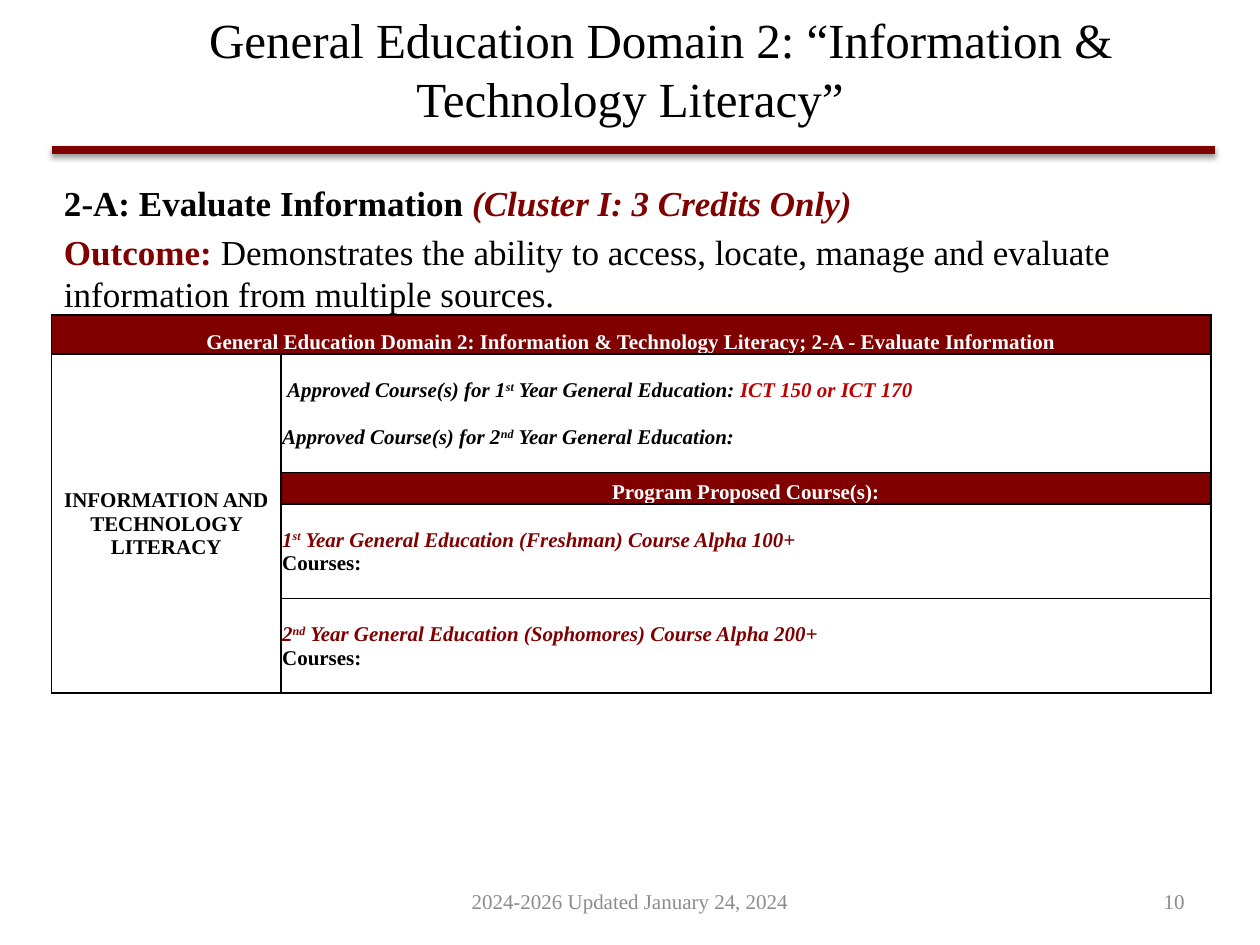
from dataclasses import dataclass
from lxml.etree import SubElement as Sub
from pptx import Presentation
from pptx.dml.color import RGBColor as Rgb
from pptx.enum.shapes import MSO_CONNECTOR as Conn
from pptx.enum.text import MSO_ANCHOR as Anchor, PP_ALIGN as Align
from pptx.oxml.ns import qn
from pptx.util import Inches, Pt


@dataclass(frozen=True)
class Theme:
    face: str = "Times New Roman"
    ink: str = "000000"
    maroon: str = "800000"
    red: str = "C00000"
    white: str = "FFFFFF"
    gray: str = "8C8C8C"
    head: int = 28
    body: int = 20
    small: int = 12


T = Theme()
W, H = 10, 7.5
LEFT, WIDE = 0.41, 9.2
INSET = 0.01

# Content: a paragraph is a list of (text, format) runs
TITLE = [[("General Education Domain 2: “Information & Technology Literacy”", {})]]
BODY = [
    [("2-A: Evaluate Information ", dict(bold=True)),
     ("(Cluster I: 3 Credits Only)", dict(bold=True, ital=True, color=T.maroon))],
    [("Outcome: ", dict(bold=True, color=T.maroon)),
     ("Demonstrates the ability to access, locate, manage and evaluate "
      "information from multiple sources.", {})],
]
FOOT = [[("2024-2026 Updated January 24, 2024", {})]]
PAGE = [[("10", {})]]


def dated(lead, nth, tail, **fmt):
    """Runs with a raised ordinal ending."""
    fmt = dict(ital=True, **fmt)
    return [(lead, fmt), (nth, dict(fmt, sup=True)), (tail, fmt)]


def course(num, nth, who):
    tail = f" Year General Education ({who}"
    return [dated(num, nth, tail, color=T.maroon), [("Courses:", {})]]


BAND = dict(fill=T.maroon, color=T.white, align=Align.CENTER, anchor=Anchor.BOTTOM)
COLS = [1.82, 7.38]
ROWS = [0.31, 0.94, 0.25, 0.75, 0.75]
SPANS = [((0, 0), (0, 1)), ((1, 0), (4, 0))]
CELLS = {
    (0, 0): ([[("General Education Domain 2: Information & Technology Literacy; "
                "2-A - Evaluate Information", {})]], BAND),
    (1, 0): ([[("INFORMATION AND TECHNOLOGY LITERACY", {})]],
             dict(align=Align.CENTER)),
    (1, 1): ([dated("Approved Course(s) for 1", "st", " Year General Education: ")
              + [("ICT 150 or ICT 170", dict(ital=True, color=T.red))],
              dated("Approved Course(s) for 2", "nd", " Year General Education:")],
             dict(gap=13.5, indent=0.04)),
    (2, 1): ([[("Program Proposed Course(s):", {})]], BAND),
    (3, 1): (course("1", "st", "Freshman) Course Alpha 100+"), {}),
    (4, 1): (course("2", "nd", "Sophomores) Course Alpha 200+"), {}),
}


def write(frame, paras, size=T.small, color=T.ink, bold=False,
          align=Align.LEFT, gap=0, indent=0):
    """Fill a text frame; gap parts paragraphs, indent moves the first line."""
    frame.word_wrap = True
    for i, runs in enumerate(paras):
        para = frame.paragraphs[0] if i == 0 else frame.add_paragraph()
        para.alignment = align
        if i:
            para.space_before = Pt(gap)
        elif indent:
            para._p.get_or_add_pPr().set("indent", str(Inches(indent)))
        for text, fmt in runs:
            run = para.add_run()
            run.text = text
            font = run.font
            font.name, font.size = T.face, Pt(size)
            font.bold = fmt.get("bold", bold)
            font.italic = fmt.get("ital", False)
            font.color.rgb = Rgb.from_string(fmt.get("color", color))
            if fmt.get("sup"):
                font._element.set("baseline", "30000")


def place(x, y, w, h, paras, anchor=Anchor.MIDDLE, **fmt):
    box = slide.shapes.add_textbox(*map(Inches, (x, y, w, h)))
    box.text_frame.vertical_anchor = anchor
    write(box.text_frame, paras, **fmt)


def edge(cell):
    """Draw all four borders, ahead of the cell's fill."""
    props = cell._tc.get_or_add_tcPr()
    for i, side in enumerate(("lnL", "lnR", "lnT", "lnB")):
        line = Sub(props, qn(f"a:{side}"), w=str(Pt(1)))
        Sub(Sub(line, qn("a:solidFill")), qn("a:srgbClr"), val=T.ink)
        props.insert(i, line)


deck = Presentation()
deck.slide_width, deck.slide_height = Inches(W), Inches(H)
slide = deck.slides.add_slide(deck.slide_layouts[5])

# Title
title = slide.shapes.title
title.left, title.top, title.width, title.height = map(
    Inches, (W * 0.05, 0.06, W * 0.9, 0.96))
title.text_frame.vertical_anchor = Anchor.MIDDLE
write(title.text_frame, TITLE, size=T.head, align=Align.CENTER, indent=0.49)

# Rule with a soft shadow
rule = slide.shapes.add_connector(
    Conn.STRAIGHT, *map(Inches, (LEFT, 1.19, 9.64, 1.19)))
rule.line.color.rgb = Rgb.from_string(T.maroon)
rule.line.width = Pt(4.5)
glow = Sub(Sub(rule._element.spPr, qn("a:effectLst")), qn("a:outerShdw"),
           blurRad=str(Pt(3.1)), dist=str(Pt(1.6)), dir="5400000", rotWithShape="0")
Sub(Sub(glow, qn("a:srgbClr"), val=T.ink), qn("a:alpha"), val="38000")

# Table
grid = slide.shapes.add_table(
    len(ROWS), len(COLS), *map(Inches, (LEFT, 2.5, WIDE, sum(ROWS)))).table
for col, w in zip(grid.columns, COLS):
    col.width = Inches(w)
for row, h in zip(grid.rows, ROWS):
    row.height = Inches(h)
for start, end in SPANS:
    grid.cell(*start).merge(grid.cell(*end))
for r in range(len(ROWS)):
    for c in range(len(COLS)):
        cell = grid.cell(r, c)
        paras, look = CELLS.get((r, c), ([], {}))
        fmt = dict(look)
        cell.fill.solid()
        cell.fill.fore_color.rgb = Rgb.from_string(fmt.pop("fill", T.white))
        cell.vertical_anchor = fmt.pop("anchor", Anchor.MIDDLE)
        cell.margin_left = cell.margin_right = cell.margin_top = Inches(INSET)
        cell.margin_bottom = 0
        edge(cell)
        write(cell.text_frame, paras, bold=True, **fmt)

# Outcome text and footer
place(LEFT, 1.39, WIDE, 0.85, BODY, anchor=Anchor.TOP, size=T.body, gap=4)
place(W * 0.34, 6.95, W * 0.32, 0.4, FOOT, color=T.gray, align=Align.CENTER)
place(7.17, 6.95, 2.33, 0.4, PAGE, color=T.gray, align=Align.RIGHT)

deck.save("out.pptx")
